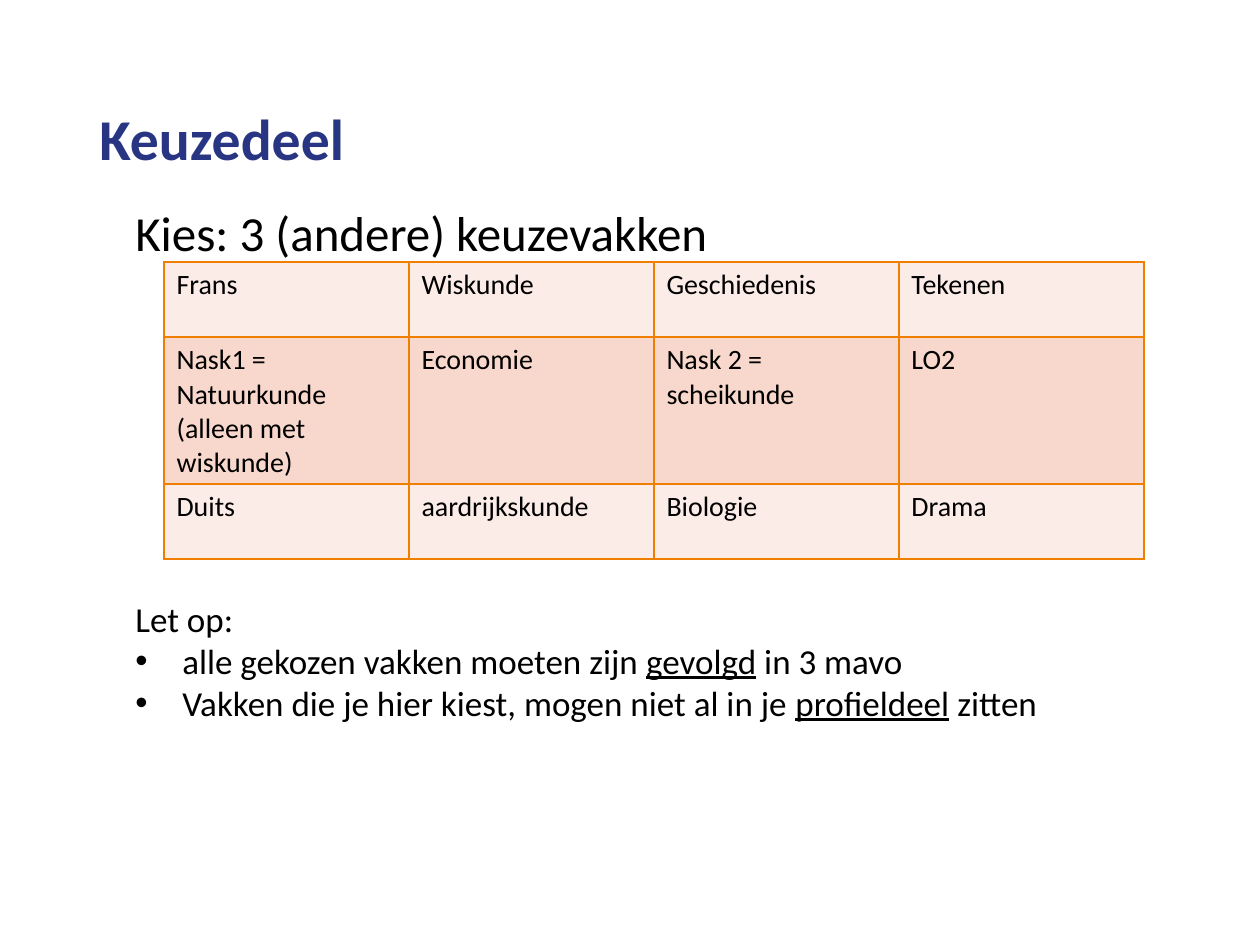
from lxml import etree
from pptx import Presentation
from pptx.dml.color import RGBColor
from pptx.enum.text import MSO_ANCHOR
from pptx.oxml.ns import qn
from pptx.util import Emu, Pt

EMU_PER_PX = 914400 // 126
MIDDLE, TOP = MSO_ANCHOR.MIDDLE, MSO_ANCHOR.TOP
FONT = "Calibri"
COLORS = {
    "title": "283583",
    "text": "000000",
    "border": "EE7F00",
    "light": "FCECE7",
    "dark": "F8D8CC",
}
SUBJECTS = [
    ["Frans", "Wiskunde", "Geschiedenis", "Tekenen"],
    ["Nask1 =\nNatuurkunde\n(alleen met wiskunde)", "Economie",
     "Nask 2 = scheikunde", "LO2"],
    ["Duits", "aardrijkskunde", "Biologie", "Drama"],
]
ROW_HEIGHTS = [75, 147, 75]
COLUMN_WIDTH = 245
# Each note holds the text before, inside and after the underlining.
NOTES = [
    ("alle gekozen vakken moeten zijn ", "gevolgd", " in 3 mavo"),
    ("Vakken die je hier kiest, mogen niet al in je ", "profieldeel", " zitten"),
]


def px(length):
    return Emu(length * EMU_PER_PX)


def format_runs(paragraph, size, color="text", bold=False):
    for run in paragraph.runs:
        run.font.name = FONT
        run.font.size = Pt(size)
        run.font.bold = bold
        run.font.color.rgb = RGBColor.from_string(COLORS[color])


def add_text(slide, box, text, size, color="text", bold=False, anchor=TOP):
    shape = slide.shapes.add_textbox(*map(px, box))
    text_frame = shape.text_frame
    text_frame.word_wrap = True
    text_frame.vertical_anchor = anchor
    text_frame.text = text
    format_runs(text_frame.paragraphs[0], size, color, bold)
    return text_frame


def add_bullet(text_frame, parts, size):
    """Add a bulleted paragraph whose middle part is underlined."""
    paragraph = text_frame.add_paragraph()
    properties = paragraph._p.get_or_add_pPr()
    properties.set("marL", str(px(47)))
    properties.set("indent", str(-px(47)))
    etree.SubElement(properties, qn("a:buFont"), typeface="Arial")
    etree.SubElement(properties, qn("a:buChar"), char="•")
    for part in parts:
        paragraph.add_run().text = part
    format_runs(paragraph, size)
    paragraph.runs[1].font.underline = True


def set_borders(cell, color):
    properties = cell._tc.get_or_add_tcPr()
    for index, side in enumerate(("lnL", "lnR", "lnT", "lnB")):
        line = etree.Element(qn(f"a:{side}"), w=str(Pt(1)))
        fill = etree.SubElement(line, qn("a:solidFill"))
        etree.SubElement(fill, qn("a:srgbClr"), val=COLORS[color])
        properties.insert(index, line)


def add_subject_table(slide, left, top):
    row_count, column_count = len(SUBJECTS), len(SUBJECTS[0])
    table = slide.shapes.add_table(
        row_count, column_count, px(left), px(top),
        px(COLUMN_WIDTH * column_count), px(sum(ROW_HEIGHTS))).table
    table.first_row = False
    table.horz_banding = False
    for column in table.columns:
        column.width = px(COLUMN_WIDTH)
    for row_index, subjects in enumerate(SUBJECTS):
        table.rows[row_index].height = px(ROW_HEIGHTS[row_index])
        band = "dark" if row_index % 2 else "light"
        for column_index, subject in enumerate(subjects):
            cell = table.cell(row_index, column_index)
            cell.text_frame.text = subject
            for paragraph in cell.text_frame.paragraphs:
                format_runs(paragraph, 16)
            cell.fill.solid()
            cell.fill.fore_color.rgb = RGBColor.from_string(COLORS[band])
            set_borders(cell, "border")


def main():
    presentation = Presentation()
    presentation.slide_width = px(1260)
    presentation.slide_height = px(945)
    slide = presentation.slides.add_slide(presentation.slide_layouts[6])

    title = add_text(slide, (87, 50, 1086, 183), "Keuzedeel", 33,
                     color="title", bold=True, anchor=MIDDLE)
    title.paragraphs[0].line_spacing = 0.9
    add_text(slide, (123, 196, 1113, 72), "Kies: 3 (andere) keuzevakken", 28)
    add_subject_table(slide, 164, 262)
    notes = add_text(slide, (123, 591, 1113, 140), "Let op:", 20)
    for parts in NOTES:
        add_bullet(notes, parts, 20)

    presentation.save("out.pptx")


if __name__ == "__main__":
    main()
